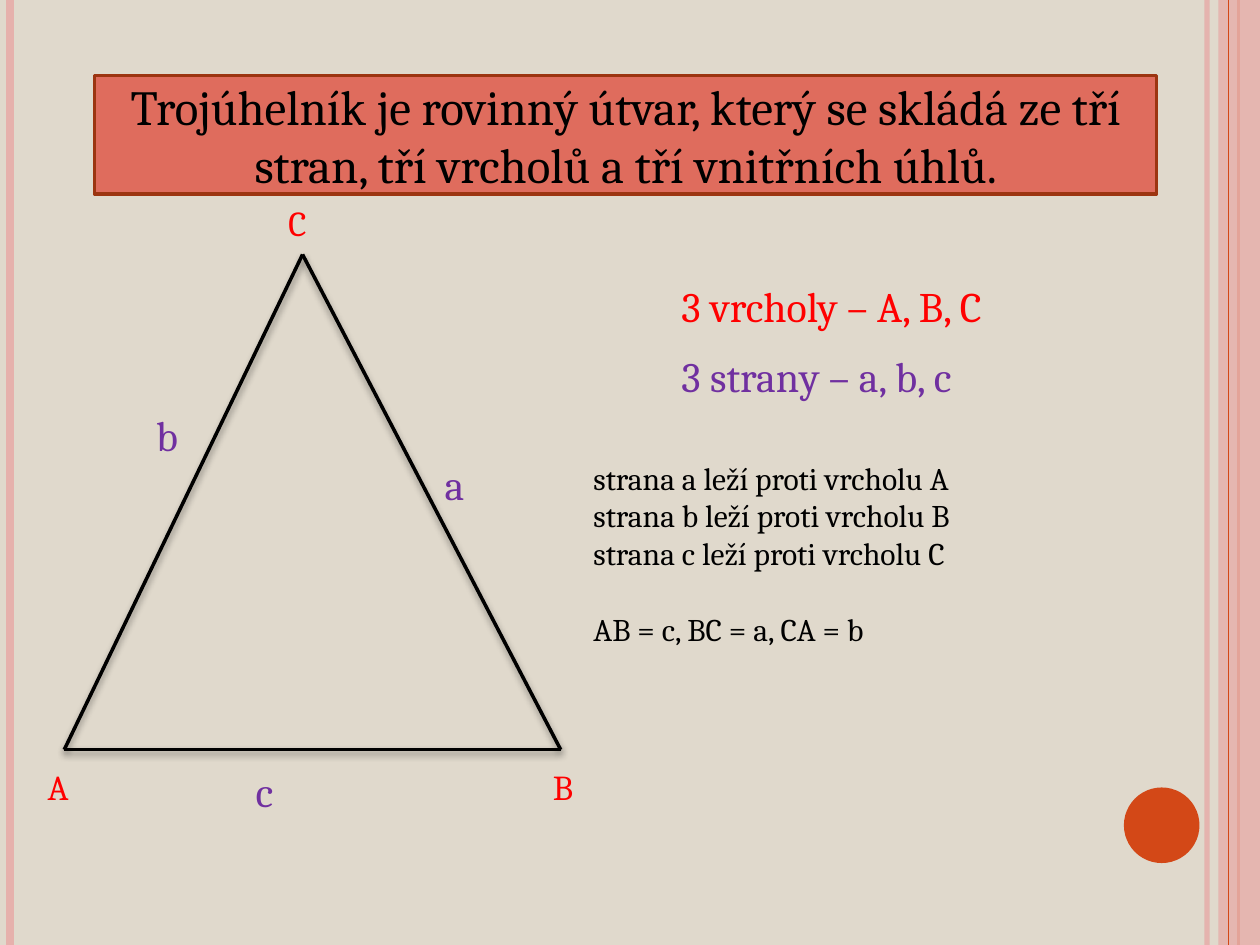
from collections import namedtuple

from lxml import etree
from pptx import Presentation, util as u
from pptx.dml.color import RGBColor
from pptx.enum import shapes, text
from pptx.oxml import ns

# Grid: 100 columns by 75 rows of square cells
COLUMNS, ROWS = 100, 75
CELL = u.Inches(0.1)
FONT = "Cambria"
BLACK, RED, PURPLE = "000000", "FF0000", "7030A0"
PINK, ORANGE = "E6B1AC", "D34817"

Box = namedtuple("Box", "left top width height")


def cells(*counts):
    return [u.Emu(round(count * CELL)) for count in counts]


def paint(color_format, color):
    color_format.rgb = RGBColor.from_string(color)


def set_fill(shape, color):
    shape.fill.solid()
    paint(shape.fill.fore_color, color)


def set_alpha(properties, percent):
    """Make the first colour under an XML element partly transparent."""
    color = properties.find(".//" + ns.qn("a:srgbClr"))
    etree.SubElement(color, ns.qn("a:alpha"), val=str(percent * 1000))


def write(shape, lines, size, color):
    frame = shape.text_frame
    frame.word_wrap = True
    frame.text = "\n".join(lines)
    for paragraph in frame.paragraphs:
        paragraph.space_before = u.Pt(0)
        for run in paragraph.runs:
            run.font.name, run.font.size = FONT, u.Pt(size)
            paint(run.font.color, color)
    return frame


def add_label(slide, box, words, size, color):
    write(slide.shapes.add_textbox(*cells(*box)), [words], size, color)


def add_line(slide, start, end, color, width):
    line = slide.shapes.add_connector(
        shapes.MSO_CONNECTOR.STRAIGHT, *cells(*start, *end))
    paint(line.line.color, color)
    line.line.width = u.Pt(width)
    effects = etree.SubElement(line._element.spPr, ns.qn("a:effectLst"))
    return line, effects


def add_plain_shape(slide, kind, box, color):
    shape = slide.shapes.add_shape(kind, *cells(*box))
    shape.shadow.inherit = False
    set_fill(shape, color)
    shape.line.fill.background()
    return shape


def add_decoration(slide, box):
    """Vertical stripes along both edges and the round badge."""
    def stripe(column, color, width):
        x = box.left + column
        return add_line(slide, (x, box.top), (x, box.top + box.height), color, width)[0]

    set_alpha(stripe(95.8, PINK, 3)._element.spPr, 93)
    stripe(0.8, PINK, 4.5)
    stripe(98.3, ORANGE, 1.5)
    band = Box(box.left + 96.7, box.top, 3.3, box.height)
    band_shape = add_plain_shape(slide, shapes.MSO_SHAPE.RECTANGLE, band, PINK)
    set_alpha(band_shape._element.spPr, 87)
    stripe(97.5, ORANGE, 0.75)
    badge = Box(box.left + 89.2, box.top + 62.5, 6, 6)
    add_plain_shape(slide, shapes.MSO_SHAPE.OVAL, badge, ORANGE)


def add_definition(slide, box):
    title = slide.shapes.title
    title.left, title.top, title.width, title.height = cells(*box)
    set_fill(title, "DF6C5D")
    paint(title.line.color, "9C3511")
    title.line.width = u.Pt(2)
    frame = write(title, ["Trojúhelník je rovinný útvar, který se skládá ze tří "
                          "stran, tří vrcholů a tří vnitřních úhlů."], 28, BLACK)
    frame.auto_size = text.MSO_AUTO_SIZE.NONE
    frame.vertical_anchor = text.MSO_ANCHOR.MIDDLE
    frame.paragraphs[0].alignment = text.PP_ALIGN.CENTER


def add_side(slide, start, end):
    effects = add_line(slide, start, end, BLACK, 2)[1]
    shadow = etree.SubElement(
        effects, ns.qn("a:outerShdw"), blurRad=str(u.Pt(4)), dist=str(u.Pt(2)),
        dir=str(90 * 60000), rotWithShape="0")
    color = etree.SubElement(shadow, ns.qn("a:srgbClr"), val=BLACK)
    etree.SubElement(color, ns.qn("a:alpha"), val="40000")


def add_triangle(slide, box):
    """Sides with shadows, then the names of vertices and sides."""
    bottom = box.top + box.height
    a = (box.left, bottom)
    b = (box.left + box.width, bottom)
    c = (box.left + 0.48 * box.width, box.top)
    for start, end in ((c, a), (c, b), (a, b)):
        add_side(slide, start, end)

    labels = (("C", 16.8, -4.7), ("B", 37.8, 40.1), ("A", -2.3, 40.1),
              ("a", 29.2, 15.7), ("c", 14.2, 40.1), ("b", 6.3, 11.8))
    for name, column, row in labels:
        size, color = (20, RED) if name.isupper() else (24, PURPLE)
        place = Box(box.left + column, box.top + row, 5, 0.2 * size)
        add_label(slide, place, name, size, color)


def add_counts(slide, box):
    for index, (words, color) in enumerate(
            (("3 vrcholy – A, B, C", RED), ("3 strany – a, b, c", PURPLE))):
        row = Box(box.left, box.top + index * box.height / 2, box.width, 5)
        add_label(slide, row, words, 24, color)


def add_facts(slide, box):
    body = slide.placeholders[1]
    body.left, body.top, body.width, body.height = cells(*box)
    lines = [f"strana {name} leží proti vrcholu {name.upper()}" for name in "abc"]
    frame = write(body, lines + ["AB = c, BC = a, CA = b"], 18, BLACK)
    frame.auto_size = text.MSO_AUTO_SIZE.NONE
    for paragraph in frame.paragraphs:
        properties = paragraph._p.get_or_add_pPr()
        properties.set("marL", "0")
        properties.set("indent", "0")
        etree.SubElement(properties, ns.qn("a:buNone"))
    # One line of space before the summary
    frame.paragraphs[-1].space_before = u.Pt(21.6)


def main():
    presentation = Presentation()
    presentation.slide_width, presentation.slide_height = cells(COLUMNS, ROWS)
    slide = presentation.slides.add_slide(presentation.slide_layouts[1])
    slide.background.fill.solid()
    paint(slide.background.fill.fore_color, "E0D9CC")

    add_decoration(slide, Box(0, 0, COLUMNS, ROWS))
    add_definition(slide, Box(7.5, 6, 84.3, 9.4))
    add_triangle(slide, Box(5.1, 20.2, 39.4, 39.3))
    add_counts(slide, Box(53.1, 21.8, 36.2, 11))
    add_facts(slide, Box(46.1, 35.9, 45.7, 19.2))
    presentation.save("out.pptx")


if __name__ == "__main__":
    main()
